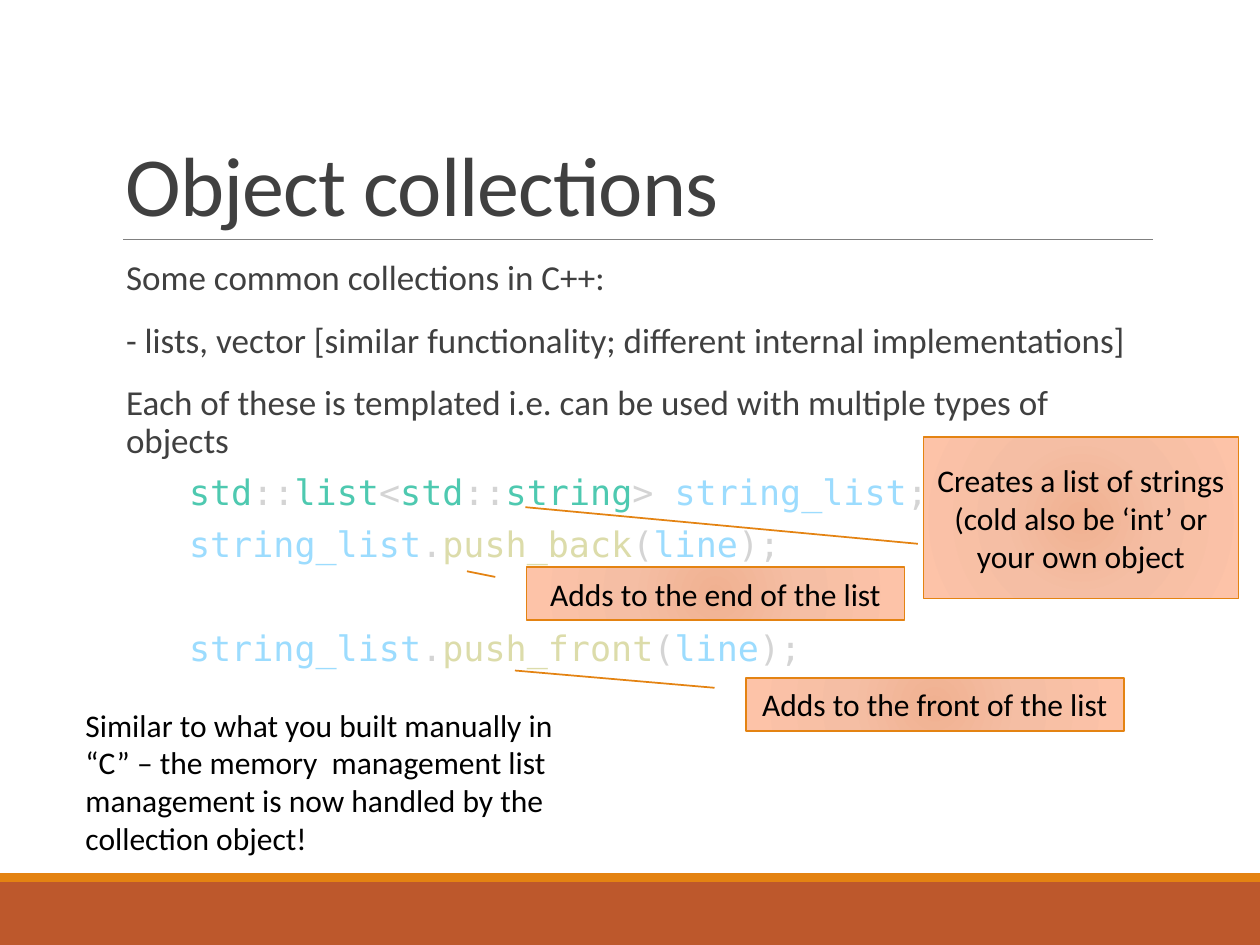
from dataclasses import dataclass

from pptx import Presentation
from pptx.dml.color import RGBColor
from pptx.enum.shapes import MSO_CONNECTOR, MSO_SHAPE
from pptx.enum.text import MSO_ANCHOR, PP_ALIGN
from pptx.oxml import parse_xml
from pptx.oxml.ns import nsdecls, qn
from pptx.util import Pt

RECTANGLE = MSO_SHAPE.RECTANGLE
CALLOUT = MSO_SHAPE.LINE_CALLOUT_1
STRAIGHT = MSO_CONNECTOR.STRAIGHT
TOP, MIDDLE, BOTTOM = MSO_ANCHOR.TOP, MSO_ANCHOR.MIDDLE, MSO_ANCHOR.BOTTOM
LEFT, CENTER = PP_ALIGN.LEFT, PP_ALIGN.CENTER


@dataclass(frozen=True)
class Theme:
    """Colours, fonts and type sizes of the slide."""
    rust: str = "BD582C"
    orange: str = "E48312"
    rule: str = "808080"
    body: str = "404040"
    black: str = "000000"
    type_name: str = "4EC9B0"
    variable: str = "9CDCFE"
    function: str = "DCDCAA"
    symbol: str = "D4D4D4"
    glow: tuple = ((0, "F0B191"), (45, "F5BEA4"), (100, "FDC3A8"))
    text_font: str = "Calibri"
    code_font: str = "DejaVu Sans Mono"
    title_size: int = 48
    body_size: int = 20
    note_size: int = 18


THEME = Theme()

BULLETS = (
    "Some common collections in C++:",
    "- lists, vector [similar functionality; different internal implementations]",
    "Each of these is templated i.e. can be used with multiple types of objects",
)


def method_call(method):
    """Return the coloured tokens of a call on string_list."""
    return (("string_list", THEME.variable), (".", THEME.symbol),
            (method, THEME.function), ("(", THEME.symbol),
            ("line", THEME.variable), (");", THEME.symbol))


DECLARATION = (
    ("std", THEME.type_name), ("::", THEME.symbol),
    ("list", THEME.type_name), ("<", THEME.symbol),
    ("std", THEME.type_name), ("::", THEME.symbol),
    ("string", THEME.type_name), ("> ", THEME.symbol),
    ("string_list", THEME.variable), (";", THEME.symbol),
)
CODE_LINES = ((DECLARATION, 6), (method_call("push_back"), 6),
              (method_call("push_front"), 36))

CALLOUTS = (
    ((527.76, 249.84, 180, 92.16), (0.661, -0.018, 0.434, -1.264),
     "Creates a list of strings (cold also be ‘int’ or your own object"),
    ((300.96, 324, 216, 30.24), (0.188, -0.083, 0.081, -0.158),
     "Adds to the end of the list"),
    ((426.24, 387.36, 216, 30.24), (0.188, -0.083, -0.139, -0.611),
     "Adds to the front of the list"),
)


def points(box):
    """Convert the numbers of a box to lengths."""
    return [Pt(value) for value in box]


def style_font(font, size, color, name=THEME.text_font):
    """Set the size, colour and typeface of a font."""
    font.size = Pt(size)
    font.name = name
    font.color.rgb = RGBColor.from_string(color)


def add_text_frame(page, box, anchor=TOP):
    """Add a wrapping text box and return its frame."""
    frame = page.shapes.add_textbox(*points(box)).text_frame
    frame.word_wrap = True
    frame.vertical_anchor = anchor
    return frame


def add_band(page, box, color):
    """Fill the box with a plain coloured band."""
    band = page.shapes.add_shape(RECTANGLE, *points(box))
    band.shadow.inherit = False
    band.fill.solid()
    band.fill.fore_color.rgb = RGBColor.from_string(color)
    band.line.fill.background()


def add_footer(page, box):
    """Place the footer band with a thin stripe along its top."""
    left, top, width, height = box
    stripe = 5
    add_band(page, (left, top + stripe, width, height - stripe), THEME.rust)
    add_band(page, (left, top, width, stripe), THEME.orange)


def add_title(page, box, text):
    """Place the title at the foot of its box, above a thin rule."""
    left, top, width, height = box
    base = top + height
    rule = page.shapes.add_connector(
        STRAIGHT, *points((left + 5.76, base, left + width, base)))
    rule.line.color.rgb = RGBColor.from_string(THEME.rule)
    rule.line.width = Pt(0.5)
    rule._element.spPr.append(parse_xml(f"<a:effectLst {nsdecls('a')}/>"))
    para = add_text_frame(page, box, BOTTOM).paragraphs[0]
    para.line_spacing = 0.85
    style_font(para.font, THEME.title_size, THEME.body)
    span = para.add_run()
    span.text = text
    span.font._element.set("spc", "-50") if hasattr(span.font, "_element") else span._r.get_or_add_rPr().set("spc", "-50")


def add_body_paragraph(frame, indent, space_before):
    """Return a new body paragraph, using the empty first one if free."""
    para = frame.paragraphs[0]
    if para.runs:
        para = frame.add_paragraph()
    para.line_spacing = 0.9
    para.space_before = Pt(space_before)
    para.space_after = Pt(2)
    para._p.get_or_add_pPr().set("marL", str(Pt(indent)))
    return para


def add_body(page, box):
    """Place the bullets and the coloured code lines."""
    frame = add_text_frame(page, box)
    frame.margin_left = frame.margin_right = 0
    for text in BULLETS:
        para = add_body_paragraph(frame, 7.2, 12)
        para.add_run().text = text
        style_font(para.font, THEME.body_size, THEME.body)
    for tokens, space_before in CODE_LINES:
        para = add_body_paragraph(frame, 43.2, space_before)
        for text, color in tokens:
            span = para.add_run()
            span.text = text
            style_font(span.font, THEME.body_size, color, THEME.code_font)


def fill_with_glow(shape):
    """Give the shape the circular gradient of the theme."""
    stops = "".join(
        f'<a:gs pos="{share * 1000}"><a:srgbClr val="{color}"/></a:gs>'
        for share, color in THEME.glow)
    edges = " ".join(f'{side}="100000"' for side in "ltrb")
    shape.fill.gradient()
    properties = shape._element.spPr
    properties.replace(properties.find(qn("a:gradFill")), parse_xml(
        f"<a:gradFill {nsdecls('a')}><a:gsLst>{stops}</a:gsLst>"
        f'<a:path path="circle"><a:fillToRect {edges}/></a:path></a:gradFill>'))


def write_note(frame, text, align):
    """Write one note paragraph into the frame."""
    para = frame.paragraphs[0]
    para.text = text
    para.alignment = align
    style_font(para.font, THEME.note_size, THEME.black)


def add_callout(page, box, pointer, text):
    """Place a glowing callout with its pointer line."""
    callout = page.shapes.add_shape(CALLOUT, *points(box))
    callout.shadow.inherit = False
    for index, value in enumerate(pointer):
        callout.adjustments[index] = value
    fill_with_glow(callout)
    callout.line.color.rgb = RGBColor.from_string(THEME.orange)
    callout.line.width = Pt(1)
    callout.text_frame.word_wrap = True
    callout.text_frame.vertical_anchor = MIDDLE
    write_note(callout.text_frame, text, CENTER)


def main():
    """Build the slide and save it."""
    deck = Presentation()
    deck.slide_width, deck.slide_height = Pt(720), Pt(540)
    page = deck.slides.add_slide(deck.slide_layouts[6])
    add_footer(page, (0, 499, 720, 41))
    add_title(page, (64.8, 22.32, 594, 114.48), "Object collections")
    add_body(page, (64.8, 145.44, 594, 316.8))
    for box, pointer, text in CALLOUTS:
        add_callout(page, box, pointer, text)
    write_note(add_text_frame(page, (41.76, 399.6, 282.24, 94.32)),
               "Similar to what you built manually in “C” – the memory  management "
               "list management is now handled by the collection object!", LEFT)
    deck.save("out.pptx")


if __name__ == "__main__":
    main()
